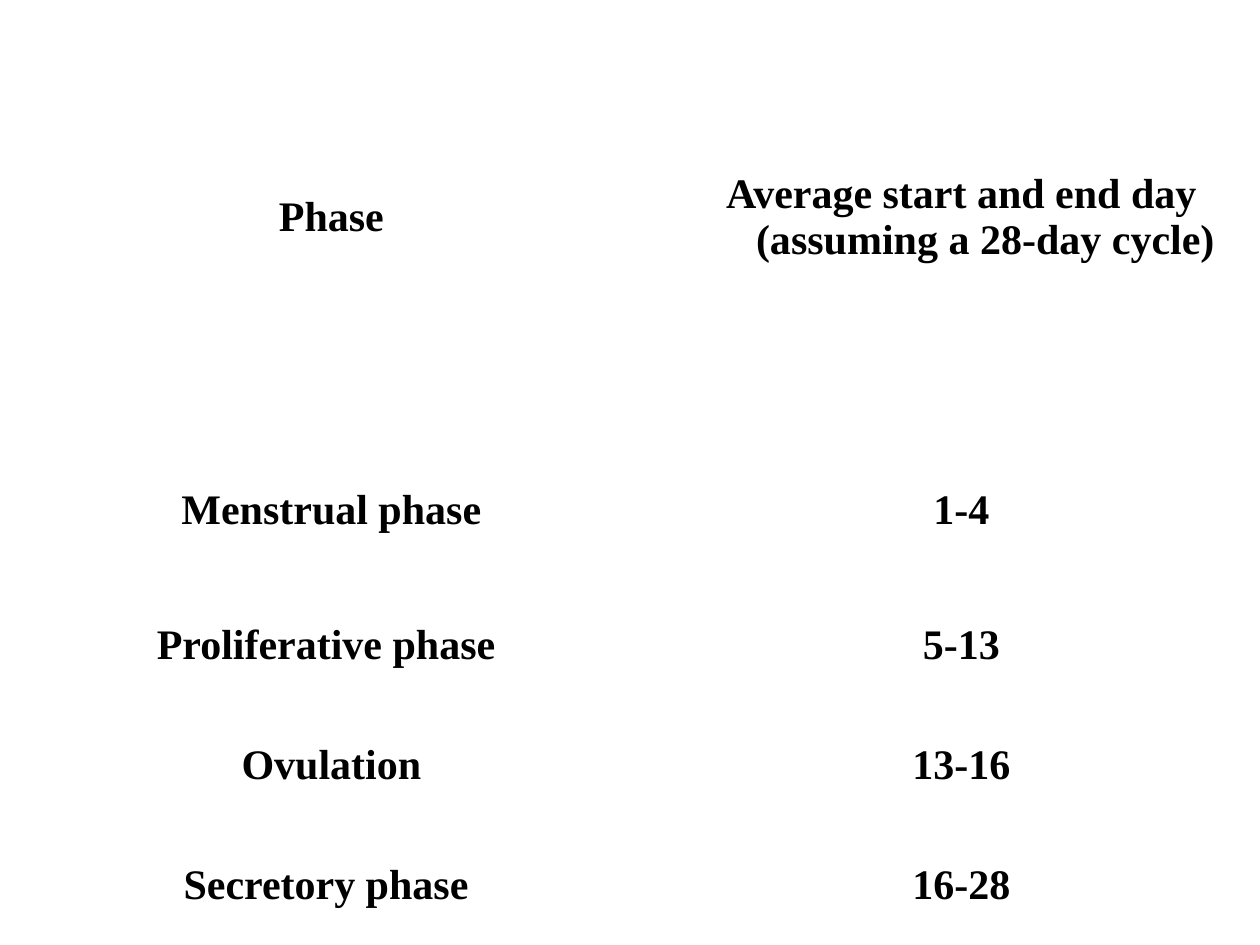
import pptx
import pptx.dml.color
import pptx.enum.text
import pptx.util

Inches = pptx.util.Inches

PHASES = [
    ("Phase", "Average start and end day\n(assuming a 28-day cycle)"),
    ("Menstrual phase", "1-4"),
    ("Proliferative phase ", "5-13"),
    ("Ovulation", "13-16"),
    ("Secretory phase ", "16-28"),
]
COLUMN_WIDTHS = [5.26, 4.74]
ROW_HEIGHTS = [3.45, 1.2, 0.95, 0.95, 0.95]


def color(hex_text):
    return pptx.dml.color.RGBColor.from_string(hex_text)


def write(paragraph, text, *, font, size, ink, bold=False, hanging=0):
    paragraph.text = text
    paragraph.alignment = pptx.enum.text.PP_ALIGN.CENTER
    properties = paragraph._p.get_or_add_pPr()
    properties.set("marL", str(Inches(hanging)))
    properties.set("indent", str(-Inches(hanging)))
    for run in paragraph.runs:
        run.font.name = font
        run.font.size = pptx.util.Pt(size)
        run.font.bold = bold
        run.font.color.rgb = color(ink)


class PhaseSlide:
    """Holds the text style and the current slide."""

    font = "Times New Roman"
    size = 24
    ink = "000000"

    def __init__(self, slide):
        self.slide = slide

    def table(self, left, top, widths, heights, rows):
        grid = self.slide.shapes.add_table(
            len(heights), len(widths), Inches(left), Inches(top),
            Inches(sum(widths)), Inches(sum(heights))).table
        for column, width in zip(grid.columns, widths):
            column.width = Inches(width)
        for row, height, texts in zip(grid.rows, heights, rows):
            row.height = Inches(height)
            for cell, text in zip(row.cells, texts):
                cell.fill.background()
                cell.vertical_anchor = pptx.enum.text.MSO_ANCHOR.MIDDLE
                write(cell.text_frame.paragraphs[0], text, font=self.font,
                      size=self.size, ink=self.ink, bold=True, hanging=0.38)


def main():
    deck = pptx.Presentation()
    deck.slide_width = Inches(10)
    deck.slide_height = Inches(7.5)
    cycle = PhaseSlide(deck.slides.add_slide(deck.slide_layouts[6]))
    cycle.table(0, 0, COLUMN_WIDTHS, ROW_HEIGHTS, PHASES)
    deck.save("out.pptx")


if __name__ == "__main__":
    main()
